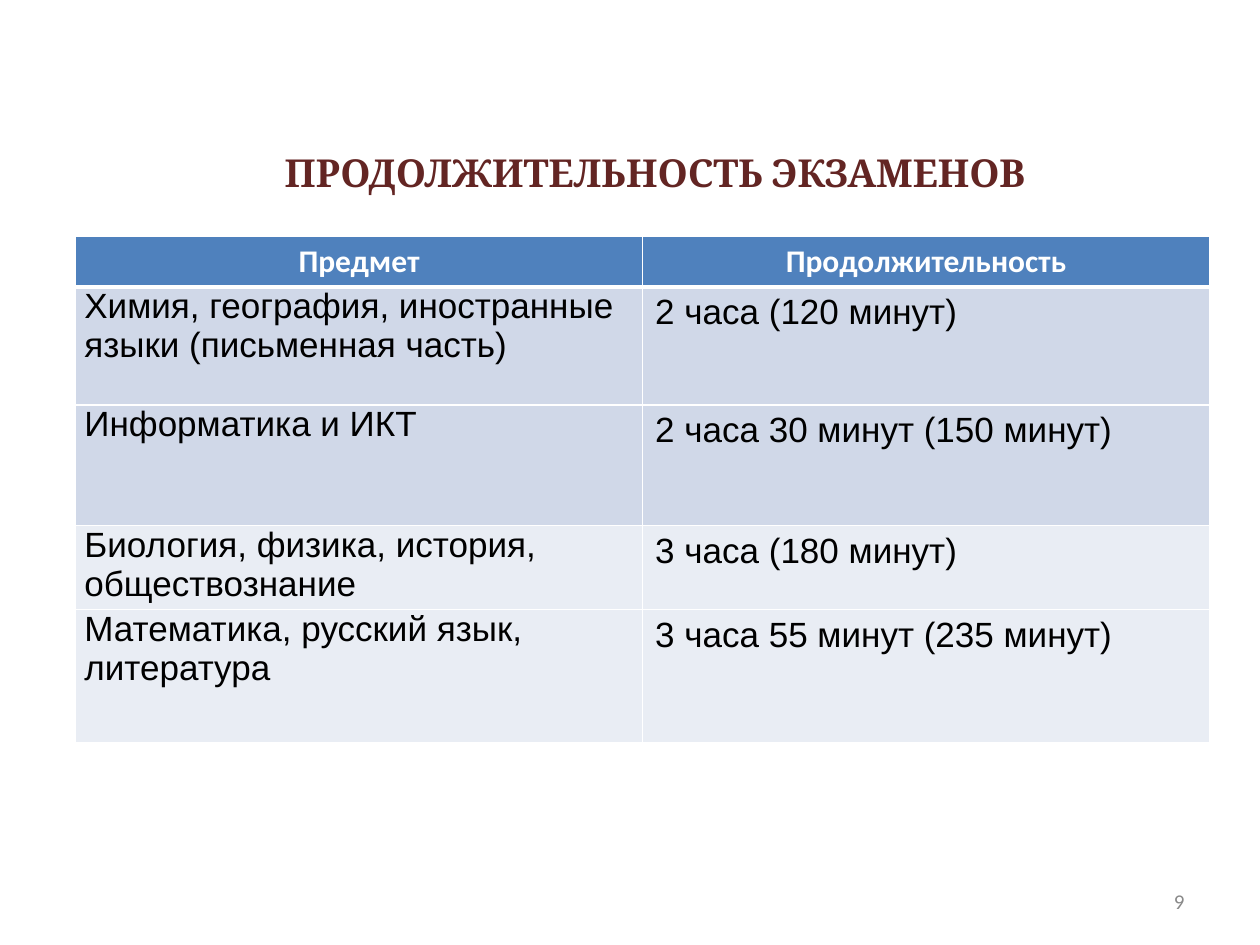
from lxml import etree
from pptx import Presentation
from pptx.dml.color import RGBColor
from pptx.enum.text import MSO_ANCHOR, PP_ALIGN
from pptx.oxml.ns import qn
from pptx.util import Inches, Pt

LEFT, CENTER, RIGHT = PP_ALIGN.LEFT, PP_ALIGN.CENTER, PP_ALIGN.RIGHT
MIDDLE = MSO_ANCHOR.MIDDLE

SLIDE_WIDTH, SLIDE_HEIGHT = Inches(10), Inches(7.5)
COLORS = {
    "title": "632523",
    "number": "898989",
    "header": "4F81BD",
    "short": "D0D8E8",
    "long": "E9EDF4",
    "white": "FFFFFF",
    "black": "000000",
}
HEADINGS = ("Предмет", "Продолжительность")
EXAMS = [
    ("Химия, география, иностранные языки (письменная часть)", "2 часа (120 минут)", "short"),
    ("Информатика и\u00a0ИКТ".replace("\u00a0", " "), "2 часа 30 минут (150 минут)", "short"),
    ("Биология, физика, история, обществознание", "3 часа (180 минут)", "long"),
    ("Математика, русский язык, литература", "3 часа 55 минут (235 минут)", "long"),
]
EXAMS = [(subject, duration, band) for subject, duration, band in EXAMS]
ROW_HEIGHTS = (0.4, 0.93, 0.95, 0.62, 1.05)

# Boxes as shares of the slide: left, top, width, height
TITLE_BOX = (0.07, 0.125, 0.9, 0.115)
TABLE_BOX = (0.06, 0.25, 0.9, 0.53)
NUMBER_BOX = (0.717, 0.927, 0.233, 0.053)


def place(box):
    left, top, width, height = box
    return (int(left * SLIDE_WIDTH), int(top * SLIDE_HEIGHT),
            int(width * SLIDE_WIDTH), int(height * SLIDE_HEIGHT))


def write(text_frame, text, size, font, color, align=LEFT, bold=False):
    paragraph = text_frame.paragraphs[0]
    paragraph.alignment = align
    run = paragraph.add_run()
    run.text = text
    run.font.size = Pt(size)
    run.font.name = font
    run.font.bold = bold
    run.font.color.rgb = RGBColor.from_string(COLORS[color])


def add_label(slide, box, text, **style):
    text_frame = slide.shapes.add_textbox(*place(box)).text_frame
    text_frame.word_wrap = True
    text_frame.vertical_anchor = MIDDLE
    write(text_frame, text, **style)


def set_borders(cell, top, bottom):
    properties = cell._tc.get_or_add_tcPr()
    for side, width in (("L", 1), ("R", 1), ("T", top), ("B", bottom)):
        line = etree.SubElement(properties, qn(f"a:ln{side}"), w=str(Pt(width)))
        fill = etree.SubElement(line, qn("a:solidFill"))
        etree.SubElement(fill, qn("a:srgbClr"), val=COLORS["white"])


def paint(cell, color):
    cell.fill.solid()
    cell.fill.fore_color.rgb = RGBColor.from_string(COLORS[color])


def add_exam_table(slide, box):
    left, top, width, height = place(box)
    table = slide.shapes.add_table(len(EXAMS) + 1, len(HEADINGS),
                                   left, top, width, height).table
    table.horz_banding = False
    for column in table.columns:
        column.width = width // len(HEADINGS)
    for row, row_height in zip(table.rows, ROW_HEIGHTS):
        row.height = int(height * row_height / sum(ROW_HEIGHTS))

    # Header row
    for cell, heading in zip(table.rows[0].cells, HEADINGS):
        set_borders(cell, 1, 3)
        paint(cell, "header")
        write(cell.text_frame, heading, 18, "Calibri", "white", CENTER, True)

    # Exam rows
    for index, (subject, duration, band) in enumerate(EXAMS, start=1):
        subject_cell, duration_cell = table.rows[index].cells
        subject_cell.margin_left = subject_cell.margin_right = Inches(0.07)
        subject_cell.margin_top = subject_cell.margin_bottom = 0
        for cell, text in ((subject_cell, subject), (duration_cell, duration)):
            set_borders(cell, 3 if index == 1 else 1, 1)
            paint(cell, band)
            write(cell.text_frame, text, 20, "Arial", "black")


def main():
    presentation = Presentation()
    presentation.slide_width, presentation.slide_height = SLIDE_WIDTH, SLIDE_HEIGHT
    slide = presentation.slides.add_slide(presentation.slide_layouts[6])
    add_label(slide, TITLE_BOX, "ПРОДОЛЖИТЕЛЬНОСТЬ ЭКЗАМЕНОВ", size=22,
              font="Cambria", color="title", align=CENTER, bold=True)
    add_exam_table(slide, TABLE_BOX)
    add_label(slide, NUMBER_BOX, "9", size=12, font="Calibri",
              color="number", align=RIGHT)
    presentation.save("out.pptx")


if __name__ == "__main__":
    main()
